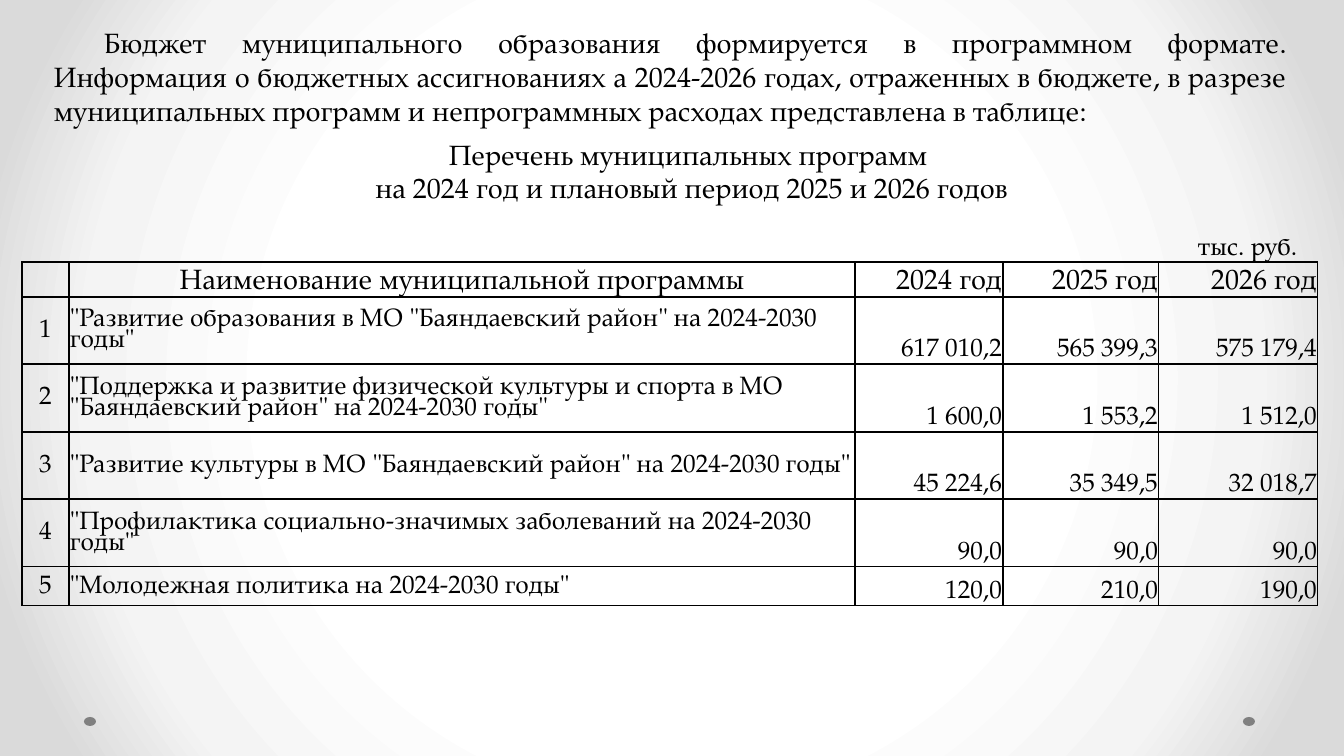
from lxml.etree import SubElement
from pptx import Presentation
from pptx.dml.color import RGBColor
from pptx.enum.shapes import MSO_SHAPE as SHAPE
from pptx.enum.text import MSO_ANCHOR as ANCHOR, MSO_AUTO_SIZE as AUTO, PP_ALIGN as ALIGN
from pptx.oxml import parse_xml
from pptx.oxml.ns import nsdecls, qn
from pptx.util import Pt

INTRO = ("Бюджет муниципального образования формируется в программном формате. "
         "Информация о бюджетных ассигнованиях а 2024-2026 годах, отраженных в бюджете, "
         "в разрезе муниципальных программ и непрограммных расходах представлена в таблице:")
TITLE = "Перечень муниципальных программ \nна 2024 год и плановый период 2025 и 2026 годов"
UNIT = "тыс. руб."
HEADER = ("", "Наименование муниципальной программы", "2024 год", "2025 год", "2026 год")
PROGRAMS = [
    ('"Развитие образования в МО "Баяндаевский район" на 2024-2030 годы"',
     "617 010,2", "565 399,3", "575 179,4"),
    ('"Поддержка и развитие физической культуры и спорта в МО "Баяндаевский район" на 2024-2030 годы"',
     "1 600,0", "1 553,2", "1 512,0"),
    ('"Развитие культуры в МО "Баяндаевский район" на 2024-2030 годы"',
     "45 224,6", "35 349,5", "32 018,7"),
    ('"Профилактика социально-значимых заболеваний на 2024-2030 годы"',
     "90,0", "90,0", "90,0"),
    ('"Молодежная политика на 2024-2030 годы"',
     "120,0", "210,0", "190,0"),
]
COL_WIDTHS = (47, 786, 148, 156, 159)
ROW_HEIGHTS = (35, 67, 68, 67, 68, 39)
DOT_LEFTS = (84, 1243)
BACKGROUND = ((50, RGBColor(0xFF, 0xFF, 0xFF)), (76, RGBColor(0xF4, 0xF4, 0xF4)),
              (92, RGBColor(0xDA, 0xDA, 0xDA)))
BLACK = RGBColor(0, 0, 0)
GRAY = RGBColor(0x80, 0x80, 0x80)
FONT = "TeX Gyre Pagella"


def px(n):
    return round(n * 914400 / 100.8)


def place(shape, left, top, width, height):
    shape.left, shape.top, shape.width, shape.height = map(px, (left, top, width, height))


def write(tf, text, size, align, spacing=None):
    tf.text = text
    for p in tf.paragraphs:
        p.alignment = align
        p.line_spacing = spacing
        for r in p.runs:
            r.font.name, r.font.size = FONT, Pt(size)
            r.font.color.rgb = BLACK


def add_text(s, box, text, size, align, wrap=True):
    sp = s.shapes.add_textbox(*map(px, box))
    write(sp.text_frame, text, size, align)
    sp.text_frame.word_wrap = wrap
    return sp


def set_background(s):
    stops = "".join(f'<a:gs pos="{pos * 1000}"><a:srgbClr val="{color}"/></a:gs>'
                    for pos, color in BACKGROUND)
    s.element.cSld.insert(0, parse_xml(
        f'<p:bg {nsdecls("p", "a")}><p:bgPr><a:gradFill rotWithShape="1"><a:gsLst>{stops}</a:gsLst>'
        '<a:path path="circle"><a:fillToRect l="50000" t="50000" r="50000" b="50000"/></a:path>'
        '</a:gradFill><a:effectLst/></p:bgPr></p:bg>'))


def set_borders(cell):
    tcPr = cell._tc.get_or_add_tcPr()
    for i, side in enumerate(("lnL", "lnR", "lnT", "lnB")):
        ln = SubElement(tcPr, qn(f"a:{side}"), w=str(Pt(1)))
        SubElement(SubElement(ln, qn("a:solidFill")), qn("a:srgbClr"), val=str(BLACK))
        tcPr.insert(i, ln)


def add_programs(s):
    rows = [HEADER] + [(str(n), *program) for n, program in enumerate(PROGRAMS, 1)]
    frame = s.shapes.add_table(len(rows), len(HEADER), px(22), px(262),
                               px(sum(COL_WIDTHS)), px(sum(ROW_HEIGHTS)))
    table = frame.table
    table.first_row = table.horz_banding = False
    for col, width in zip(table.columns, COL_WIDTHS):
        col.width = px(width)
    for row, height in zip(table.rows, ROW_HEIGHTS):
        row.height = px(height)
    for i, values in enumerate(rows):
        for j, value in enumerate(values):
            cell = table.cell(i, j)
            cell.margin_left = cell.margin_right = cell.margin_top = px(1)
            cell.margin_bottom = 0
            label = i > 0 and j < 2
            cell.vertical_anchor = ANCHOR.MIDDLE if label else ANCHOR.BOTTOM
            align = ALIGN.RIGHT if j > 1 else ALIGN.LEFT if label and j == 1 else ALIGN.CENTER
            write(cell.text_frame, value, 18 if i else 20, align, 0.82 if label else None)
            cell.fill.background()
            set_borders(cell)


prs = Presentation()
prs.slide_width, prs.slide_height = px(1344), px(756)
s = prs.slides.add_slide(prs.slide_layouts[5])
set_background(s)

for left in DOT_LEFTS:
    dot = s.shapes.add_shape(SHAPE.OVAL, px(left), px(717), px(12), px(9))
    dot.shadow.inherit = False
    dot.fill.solid()
    dot.fill.fore_color.rgb = GRAY
    dot.line.fill.background()

intro = add_text(s, (44, 21, 1252, 112), INTRO, 20, ALIGN.JUSTIFY)
intro.text_frame.paragraphs[0]._p.get_or_add_pPr().set("indent", str(px(50)))

title = s.shapes.title
place(title, 251, 132, 881, 78)
tf = title.text_frame
write(tf, TITLE, 20, ALIGN.CENTER)
tf.word_wrap, tf.auto_size, tf.vertical_anchor = True, AUTO.NONE, ANCHOR.TOP

add_programs(s)
add_text(s, (1188, 225, 126, 40), UNIT, 18, ALIGN.LEFT, wrap=False)

prs.save("out.pptx")
